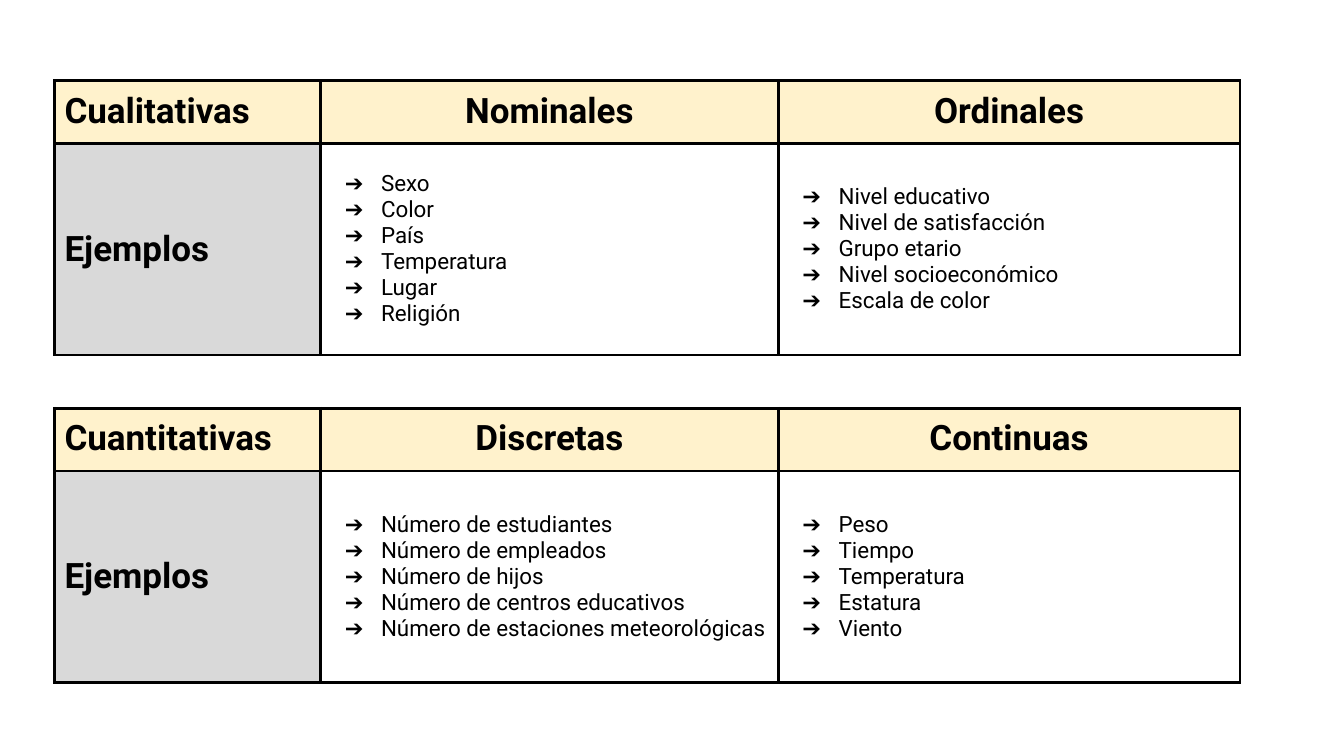
from lxml import etree
from pptx import Presentation
from pptx.dml.color import RGBColor
from pptx.enum.text import MSO_ANCHOR, PP_ALIGN
from pptx.oxml.ns import qn
from pptx.util import Pt

LEFT, CENTER, JUSTIFY = PP_ALIGN.LEFT, PP_ALIGN.CENTER, PP_ALIGN.JUSTIFY
TOP, MIDDLE = MSO_ANCHOR.TOP, MSO_ANCHOR.MIDDLE

VARIABLE_TYPES = [
    ("Cualitativas", {
        "Nominales": ["Sexo", "Color", "País", "Temperatura", "Lugar", "Religión"],
        "Ordinales": ["Nivel educativo", "Nivel de satisfacción", "Grupo etario",
                      "Nivel socioeconómico", "Escala de color"],
    }),
    ("Cuantitativas", {
        "Discretas": ["Número de estudiantes", "Número de empleados", "Número de hijos",
                      "Número de centros educativos",
                      "Número de estaciones meteorológicas"],
        "Continuas": ["Peso", "Tiempo", "Temperatura", "Estatura", "Viento"],
    }),
]
EXAMPLES_LABEL = "Ejemplos"

COLORS = {"ink": "000000", "header": "FFF2CC", "label": "D9D9D9", "body": "FFFFFF"}
FONT = "Roboto"
HEADING_SIZE, EXAMPLE_SIZE = 25, 16
TABLE_LEFT, TABLE_TOP, TABLE_STEP = 38.9, 57.6, 234
COLUMN_WIDTHS = [190.1, 326.9, 329.8]
ROW_HEIGHTS = [44.8, 151.2]
CELL_MARGIN, BORDER_WIDTH = 7.2, 2.25
BULLET_INDENT, BULLET_HANG = 36, 25.9


def add_color(parent, tag, color):
    holder = etree.SubElement(parent, qn(tag))
    etree.SubElement(holder, qn("a:srgbClr"), val=color)
    return holder


def add_borders(cell):
    """Draw all four sides; the line elements must come before the cell's fill."""
    properties = cell._tc.get_or_add_tcPr()
    for index, side in enumerate(("a:lnL", "a:lnR", "a:lnT", "a:lnB")):
        line = etree.Element(qn(side), w=str(Pt(BORDER_WIDTH)))
        add_color(line, "a:solidFill", COLORS["ink"])
        properties.insert(index, line)


def add_arrow_bullet(paragraph):
    properties = paragraph._p.get_or_add_pPr()
    properties.set("marL", str(Pt(BULLET_INDENT)))
    properties.set("indent", str(-Pt(BULLET_HANG)))
    add_color(properties, "a:buClr", COLORS["ink"])
    etree.SubElement(properties, qn("a:buFont"), typeface=FONT)
    etree.SubElement(properties, qn("a:buChar"), char="➔")


def fill_cell(cell, lines, fill, size, align, anchor, bulleted=False):
    cell.fill.solid()
    cell.fill.fore_color.rgb = RGBColor.from_string(COLORS[fill])
    add_borders(cell)
    cell.margin_left = cell.margin_right = Pt(CELL_MARGIN)
    cell.margin_top = cell.margin_bottom = Pt(CELL_MARGIN)
    cell.vertical_anchor = anchor
    cell.text_frame.text = "\n".join(lines)
    for paragraph in cell.text_frame.paragraphs:
        paragraph.alignment = align
        if bulleted:
            add_arrow_bullet(paragraph)
        for run in paragraph.runs:
            run.font.name = FONT
            run.font.size = Pt(size)
            run.font.bold = not bulleted
            run.font.color.rgb = RGBColor.from_string(COLORS["ink"])


def add_variable_table(slide, top, variable_type, groups):
    table = slide.shapes.add_table(
        len(ROW_HEIGHTS), len(COLUMN_WIDTHS), Pt(TABLE_LEFT), Pt(top),
        Pt(sum(COLUMN_WIDTHS)), Pt(sum(ROW_HEIGHTS))).table
    table.first_row = table.horz_banding = False
    for column, width in zip(table.columns, COLUMN_WIDTHS):
        column.width = Pt(width)
    for row, height in zip(table.rows, ROW_HEIGHTS):
        row.height = Pt(height)

    fill_cell(table.cell(0, 0), [variable_type], "header", HEADING_SIZE, LEFT, TOP)
    fill_cell(table.cell(1, 0), [EXAMPLES_LABEL], "label", HEADING_SIZE, LEFT, MIDDLE)
    for column, (group, examples) in enumerate(groups.items(), start=1):
        fill_cell(table.cell(0, column), [group], "header", HEADING_SIZE, CENTER, TOP)
        fill_cell(table.cell(1, column), examples, "body", EXAMPLE_SIZE, JUSTIFY,
                  MIDDLE, bulleted=True)


def main():
    presentation = Presentation()
    presentation.slide_width, presentation.slide_height = Pt(960), Pt(540)
    slide = presentation.slides.add_slide(presentation.slide_layouts[6])
    for index, (variable_type, groups) in enumerate(VARIABLE_TYPES):
        add_variable_table(slide, TABLE_TOP + index * TABLE_STEP, variable_type, groups)
    presentation.save("out.pptx")


if __name__ == "__main__":
    main()
